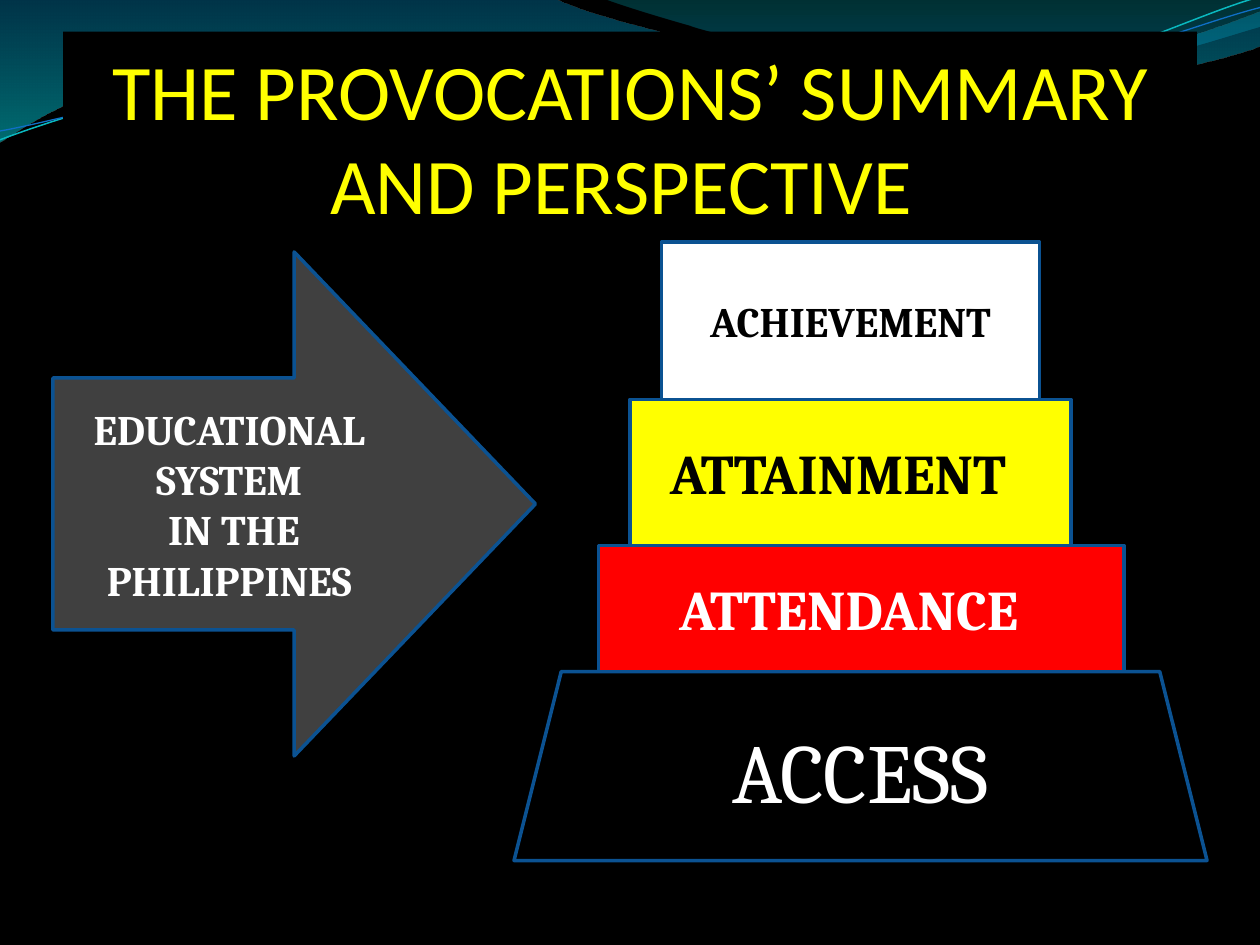
import pptx
import pptx.dml.color
import pptx.enum.shapes
import pptx.enum.text
import pptx.oxml.ns
import pptx.util
from lxml import etree

Inches = pptx.util.Inches
Pt = pptx.util.Pt
RGBColor = pptx.dml.color.RGBColor
MSO_SHAPE = pptx.enum.shapes.MSO_SHAPE
MSO_ANCHOR = pptx.enum.text.MSO_ANCHOR
PP_ALIGN = pptx.enum.text.PP_ALIGN
qualified = pptx.oxml.ns.qn

BLACK = RGBColor(0x00, 0x00, 0x00)
WHITE = RGBColor(0xFF, 0xFF, 0xFF)
YELLOW = RGBColor(0xFF, 0xFF, 0x00)
RED = RGBColor(0xFF, 0x00, 0x00)
GRAY = RGBColor(0x40, 0x40, 0x40)
OUTLINE_BLUE = RGBColor(0x0B, 0x52, 0x92)
DEEP_BLUE = RGBColor(0x00, 0x74, 0xA1)
AQUA = RGBColor(0x00, 0xC6, 0xCF)
TEAL = RGBColor(0x00, 0xA1, 0xA9)
SKY_BLUE = RGBColor(0x00, 0x8B, 0xBF)
LINE_TEAL = RGBColor(0x0A, 0xB8, 0xBF)
LINE_BLUE = RGBColor(0x0F, 0x6F, 0xC6)

LEFT_WAVE = [
    [(0, 0)], [(4.4, -0.01)],
    [(4.76, 0.17), (6.64, 0.63), (7.58, 0.63)],
    [(8.53, 0.63), (9.58, 0.26), (10, 0.09)],
    [(10.01, 0.36)],
    [(9.83, 0.44), (8.7, 0.76), (7.46, 0.75)],
    [(6.22, 0.75), (3.82, 0.28), (2.57, 0.34)],
    [(1.29, 0.36), (0.46, 0.83), (-0.01, 1.13)],
]
RIGHT_WAVE = [
    [(4.79, -0.01)],
    [(5.09, 0.11), (6.82, 0.62), (7.69, 0.65)],
    [(8.56, 0.69), (9.61, 0.32), (10, 0.21)],
    [(10, 0)],
]
TEAL_CURVE = [
    [(0, 1.11)],
    [(0.48, 0.93), (1.58, 0.57), (2.77, 0.52)],
    [(3.95, 0.47), (5.93, 0.89), (7.13, 0.8)],
    [(8.33, 0.71), (9.38, 0.15), (9.98, -0.02)],
]
BLUE_CURVE = [
    [(0, 1.04)],
    [(0.47, 0.96), (1.64, 0.61), (2.83, 0.56)],
    [(4.03, 0.51), (5.97, 0.84), (7.17, 0.75)],
    [(8.36, 0.67), (9.41, 0.21), (10, 0.06)],
]


def bend_segments(shape, segments):
    lines = iter(list(shape.element.iter(qualified("a:lnTo"))))
    for segment in segments[1:]:
        first, *others = [next(lines) for point in segment]
        if others:
            curve = etree.Element(qualified("a:cubicBezTo"))
            first.addprevious(curve)
            for line in (first, *others):
                curve.append(line[0])
                line.getparent().remove(line)


def move_to_master(shape, master):
    tree = master.placeholders[0].element.getparent()
    shape.element.nvSpPr.cNvPr.set("id", str(100 + len(tree)))
    master.placeholders[0].element.addprevious(shape.element)


def add_outline(slide, segments, close):
    points = [(Inches(x), Inches(y)) for segment in segments for x, y in segment]
    builder = slide.shapes.build_freeform(*points[0], scale=1.0)
    builder.add_line_segments(points[1:], close=close)
    shape = builder.convert_to_shape()
    shape.shadow.inherit = False
    bend_segments(shape, segments)
    return shape


def add_wave(slide, master, segments, stops):
    shape = add_outline(slide, segments, True)
    shape.line.fill.background()
    shape.fill.gradient()
    shape.fill.gradient_angle = 270
    for stop, (position, color, opacity) in zip(shape.fill.gradient_stops, stops):
        stop.position = position
        stop.color.rgb = color
    color_elements = shape.element.spPr.iter(qualified("a:srgbClr"))
    for color_element, (position, color, opacity) in zip(color_elements, stops):
        alpha = etree.SubElement(color_element, qualified("a:alpha"))
        alpha.set("val", str(opacity * 1000))
    move_to_master(shape, master)


def add_curve(slide, master, segments, color, width):
    shape = add_outline(slide, segments, False)
    shape.fill.background()
    shape.line.color.rgb = color
    shape.line.width = Pt(width)
    move_to_master(shape, master)


def add_run(paragraph, text, font_name, size, color, bold):
    run = paragraph.add_run()
    run.text = text
    run.font.name = font_name
    run.font.size = Pt(size)
    run.font.color.rgb = color
    run.font.bold = bold


def format_title(slide):
    title = slide.shapes.title
    title.left, title.top = Inches(0.5), Inches(0.25)
    title.width, title.height = Inches(9), Inches(1.58)
    title.fill.solid()
    title.fill.fore_color.rgb = BLACK
    frame = title.text_frame
    frame.auto_size = pptx.enum.text.MSO_AUTO_SIZE.NONE
    frame.word_wrap = True
    frame.vertical_anchor = MSO_ANCHOR.BOTTOM
    frame.margin_left = frame.margin_right = frame.margin_bottom = 0
    frame.margin_top = Inches(0.05)
    paragraph = frame.paragraphs[0]
    paragraph.alignment = PP_ALIGN.CENTER
    add_run(paragraph, "THE PROVOCATIONS’ SUMMARY", "Calibri", 45, YELLOW, False)
    paragraph.add_line_break()
    add_run(paragraph, "AND PERSPECTIVE ", "Calibri", 45, YELLOW, False)


def add_block(slide, kind, box, fill, lines, size, color, bold=True):
    shape = slide.shapes.add_shape(kind, *(Inches(value) for value in box))
    shape.shadow.inherit = False
    shape.fill.solid()
    shape.fill.fore_color.rgb = fill
    shape.line.color.rgb = OUTLINE_BLUE
    shape.line.width = Pt(2)
    frame = shape.text_frame
    frame.word_wrap = True
    frame.vertical_anchor = MSO_ANCHOR.MIDDLE
    for index, text in enumerate(lines):
        paragraph = frame.add_paragraph() if index else frame.paragraphs[0]
        paragraph.alignment = PP_ALIGN.CENTER
        add_run(paragraph, text, "Cambria", size, color, bold)


def main():
    presentation = pptx.Presentation()
    presentation.slide_width = Inches(10)
    presentation.slide_height = Inches(7.5)
    master = presentation.slide_master
    slide = presentation.slides.add_slide(presentation.slide_layouts[5])
    slide.background.fill.solid()
    slide.background.fill.fore_color.rgb = BLACK

    add_wave(slide, master, LEFT_WAVE, [(0, DEEP_BLUE, 45), (1, AQUA, 55)])
    add_wave(slide, master, RIGHT_WAVE, [(0, TEAL, 30), (0.8, SKY_BLUE, 45)])
    add_curve(slide, master, TEAL_CURVE, LINE_TEAL, 0.85)
    add_curve(slide, master, BLUE_CURVE, LINE_BLUE, 0.75)
    format_title(slide)

    add_block(slide, MSO_SHAPE.TRAPEZOID, (4.08, 5.33, 5.5, 1.5), BLACK,
              ["ACCESS"], 48, WHITE, bold=False)
    add_block(slide, MSO_SHAPE.RECTANGLE, (4.75, 4.33, 4.17, 1), RED,
              ["ATTENDANCE  "], 32, WHITE)
    add_block(slide, MSO_SHAPE.RECTANGLE, (5, 3.17, 3.5, 1.16), YELLOW,
              ["ATTAINMENT  "], 32, BLACK)
    add_block(slide, MSO_SHAPE.RECTANGLE, (5.25, 1.92, 3, 1.25), WHITE,
              ["ACHIEVEMENT"], 24, BLACK)
    add_block(slide, MSO_SHAPE.RIGHT_ARROW, (0.42, 2, 3.83, 4), GRAY,
              ["EDUCATIONAL ", "SYSTEM ", "IN THE PHILIPPINES "], 24, WHITE)

    presentation.save("out.pptx")


if __name__ == "__main__":
    main()
